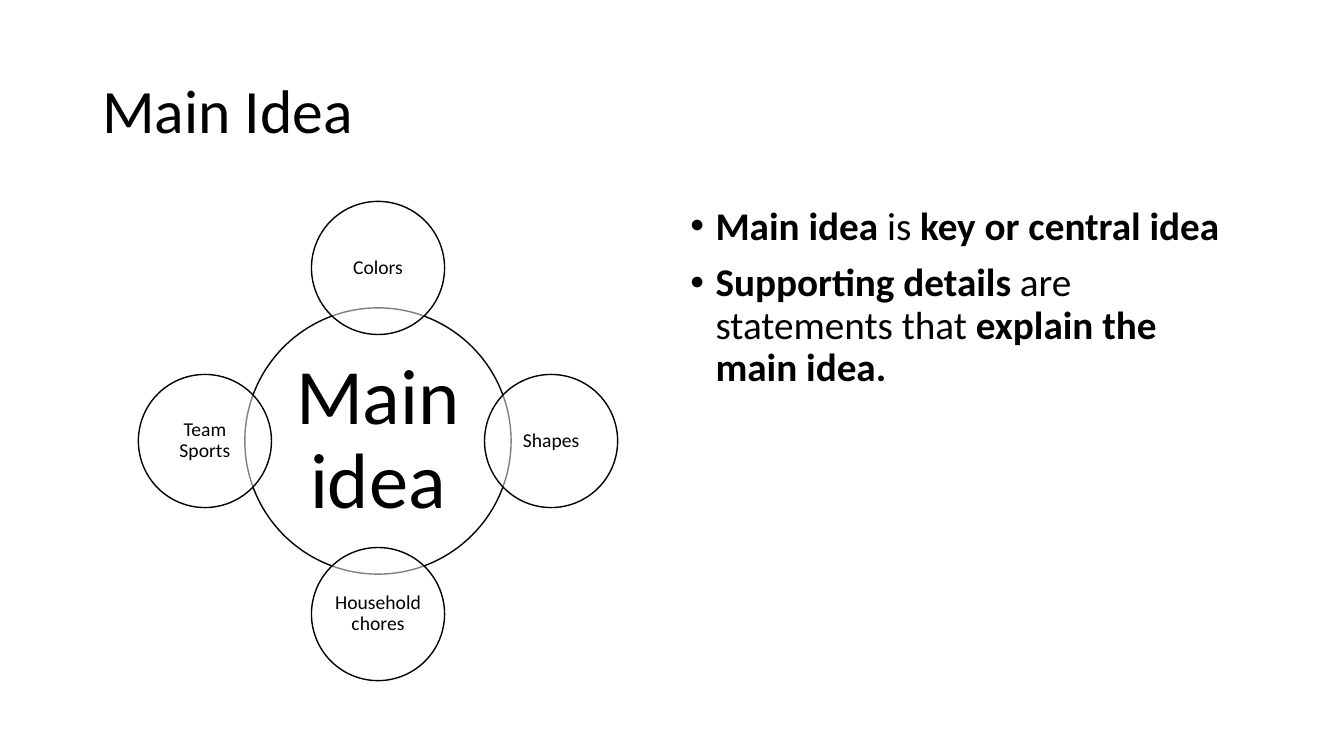
from dataclasses import dataclass
from math import cos, radians, sin

from pptx import Presentation
from pptx.dml.color import RGBColor
from pptx.enum.shapes import MSO_SHAPE
from pptx.enum.text import MSO_ANCHOR, PP_ALIGN
from pptx.oxml.ns import qn
from pptx.oxml.xmlchemy import OxmlElement
from pptx.shapes.autoshape import Shape
from pptx.slide import Slide
from pptx.util import Inches, Pt

ELLIPSE = MSO_SHAPE.OVAL
MIDDLE, TOP = MSO_ANCHOR.MIDDLE, MSO_ANCHOR.TOP
CENTER, LEFT = PP_ALIGN.CENTER, PP_ALIGN.LEFT

COLUMNS, ROWS = 160, 90
UNIT = Inches(1 / 12)
COLORS = {"ink": "000000", "paper": "FFFFFF"}
FONT = "Calibri"

HUB_COLUMN, HUB_ROW = 45, 52.5
HUB_DIAMETER = 31.7
TOPIC_DIAMETER = HUB_DIAMETER / 2
ORBIT = HUB_DIAMETER * 0.65


@dataclass(frozen=True)
class Phrase:
    text: str
    bold: bool = False


@dataclass(frozen=True)
class TextArea:
    column: float
    row: float
    columns: float
    rows: float
    size: float
    anchor: MSO_ANCHOR
    paragraphs: tuple[tuple[Phrase, ...], ...]
    bulleted: bool = False


@dataclass(frozen=True)
class Circle:
    label: str
    column: float
    row: float
    diameter: float
    size: float
    inset: float


TITLE = TextArea(11, 4.8, 138, 17.4, 44, MIDDLE, ((Phrase("Main Idea"),),))
DEFINITIONS = TextArea(81, 24, 68, 57.1, 28, TOP, (
    (Phrase("Main idea ", True), Phrase("is "), Phrase("key or central idea", True)),
    (Phrase("Supporting details ", True), Phrase("are statements that "),
     Phrase("explain the main idea.", True)),
), bulleted=True)
HUB = Circle("Main idea", HUB_COLUMN, HUB_ROW, HUB_DIAMETER, 56, 0.08)
TOPICS = ("Colors", "Shapes", "Household chores", "Team Sports")


def grid(units: float) -> int:
    return round(units * UNIT)


def ink(name: str) -> RGBColor:
    return RGBColor.from_string(COLORS[name])


def apply(target: object, values: dict[str, object]) -> None:
    for attribute, value in values.items():
        setattr(target, attribute, value)


def write(box: Shape, paragraphs: tuple[tuple[Phrase, ...], ...], size: float,
          layout: dict[str, object], frame_format: dict[str, object],
          bulleted: bool = False) -> None:
    frame = box.text_frame
    apply(frame, {"word_wrap": True, **frame_format})
    for index, phrases in enumerate(paragraphs):
        paragraph = frame.add_paragraph() if index else frame.paragraphs[0]
        apply(paragraph, {"line_spacing": 0.9, **layout})
        if bulleted:
            properties = paragraph._p.get_or_add_pPr()
            properties.set("marL", str(Inches(0.25)))
            properties.set("indent", str(-Inches(0.25)))
            for tag, key, value in (("a:buFont", "typeface", "Arial"),
                                    ("a:buChar", "char", "•")):
                bullet = OxmlElement(tag)
                bullet.set(key, value)
                properties.append(bullet)
        for phrase in phrases:
            run = paragraph.add_run()
            run.text = phrase.text
            apply(run.font, {"name": FONT, "size": Pt(size), "bold": phrase.bold})
            run.font.color.rgb = ink("ink")


def draw_text(slide: Slide, area: TextArea) -> None:
    box = slide.shapes.add_textbox(grid(area.column), grid(area.row),
                                   grid(area.columns), grid(area.rows))
    layout = {"alignment": LEFT, "space_before": Pt(10 if area.bulleted else 0)}
    write(box, area.paragraphs, area.size, layout,
          {"vertical_anchor": area.anchor}, area.bulleted)


def draw_circle(slide: Slide, circle: Circle) -> None:
    radius = circle.diameter / 2
    disc = slide.shapes.add_shape(
        ELLIPSE, grid(circle.column - radius), grid(circle.row - radius),
        grid(circle.diameter), grid(circle.diameter))
    disc.shadow.inherit = False
    disc.fill.solid()
    disc.fill.fore_color.rgb = ink("paper")
    alpha = OxmlElement("a:alpha")
    alpha.set("val", "50000")
    disc._element.spPr.find(qn("a:solidFill")).find(qn("a:srgbClr")).append(alpha)
    disc.line.color.rgb = ink("ink")
    disc.line.width = Pt(1)
    margins = {f"margin_{side}": Inches(circle.inset)
               for side in ("left", "top", "right", "bottom")}
    write(disc, ((Phrase(circle.label),),), circle.size, {"alignment": CENTER},
          {"vertical_anchor": MIDDLE, **margins})


def topic_circles() -> list[Circle]:
    step = 360 / len(TOPICS)
    angles = [radians(step * index) for index in range(len(TOPICS))]
    return [Circle(topic, HUB_COLUMN + ORBIT * sin(angle),
                   HUB_ROW - ORBIT * cos(angle), TOPIC_DIAMETER, 14, 0.02)
            for topic, angle in zip(TOPICS, angles)]


def main() -> None:
    deck = Presentation()
    apply(deck, {"slide_width": grid(COLUMNS), "slide_height": grid(ROWS)})
    slide = deck.slides.add_slide(deck.slide_layouts[6])
    slide.background.fill.solid()
    slide.background.fill.fore_color.rgb = ink("paper")
    draw_text(slide, TITLE)
    for circle in (HUB, *topic_circles()):
        draw_circle(slide, circle)
    draw_text(slide, DEFINITIONS)
    deck.save("out.pptx")


if __name__ == "__main__":
    main()
